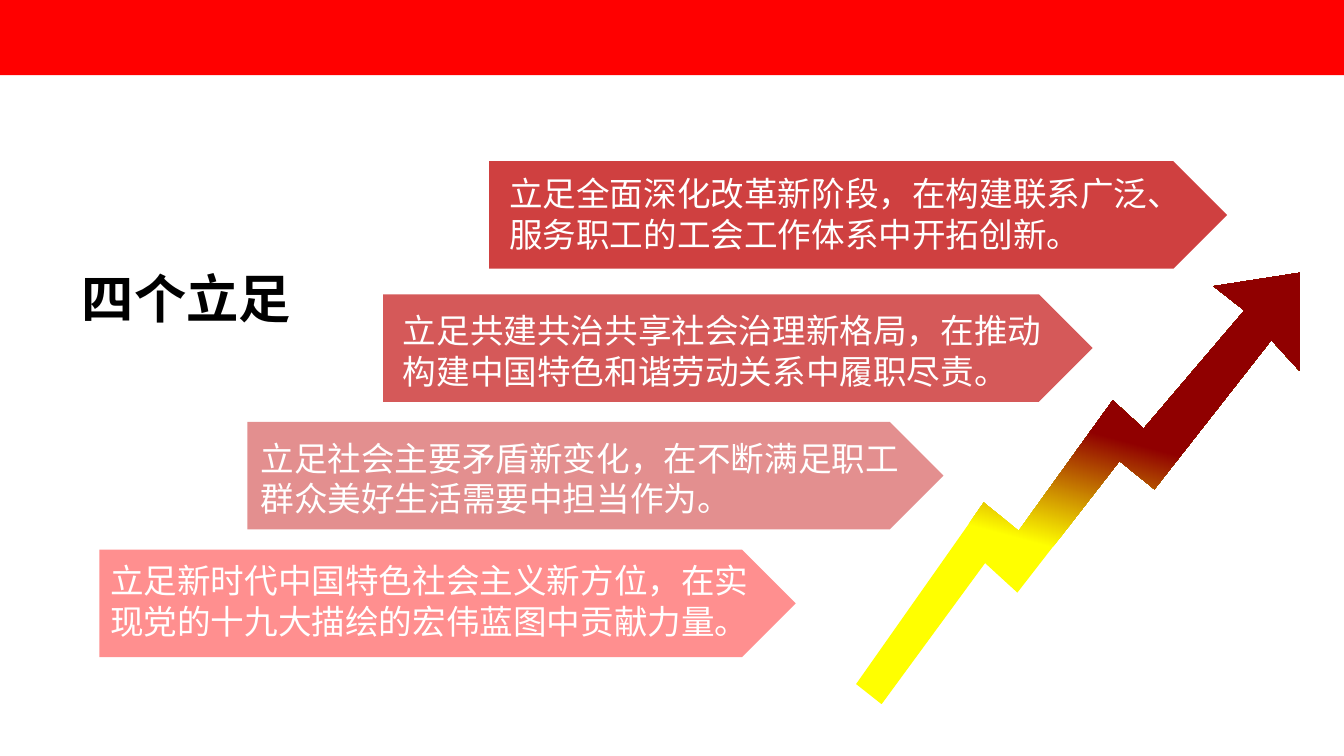
from lxml import etree
from pptx import Presentation
from pptx.dml.color import RGBColor
from pptx.enum.shapes import MSO_SHAPE as Shape
from pptx.enum.text import MSO_ANCHOR as Anchor, MSO_AUTO_SIZE as AutoSize, PP_ALIGN as Align
from pptx.oxml.ns import qn
from pptx.util import Inches, Pt

THEME = {
    "band": "FF0000", "light": "FF0000", "deep": "C00000",
    "arrow_start": "FFFF00", "arrow_end": "900000",
    "title": "000000", "body": "FFFFFF",
    "latin": "Arial", "cjk": "Noto Sans CJK SC",
    "title_size": 28, "body_size": 18,
}
TITLE = "四个立足"
BANNER_H, LABEL_H = 0.8, 0.71

# text, banner (left, top, width), colour, opacity in percent, label (left, top, width)
STANDPOINTS = [
    ("立足新时代中国特色社会主义新方位，在实现党的十九大描绘的宏伟蓝图中贡献力量。",
     (0.74, 4.09, 5.18), "light", 44, (0.72, 4.12, 5.19)),
    ("立足社会主要矛盾新变化，在不断满足职工群众美好生活需要中担当作为。",
     (1.84, 3.14, 5.18), "deep", 44, (1.84, 3.21, 5)),
    ("立足共建共治共享社会治理新格局，在推动构建中国特色和谐劳动关系中履职尽责。",
     (2.85, 2.19, 5.28), "deep", 65, (2.9, 2.26, 5)),
    ("立足全面深化改革新阶段，在构建联系广泛、服务职工的工会工作体系中开拓创新。",
     (3.64, 1.2, 5.49), "deep", 75, (3.69, 1.24, 5)),
]
RISING_ARROW = [
    (6.37, 5.09), (7.32, 3.74), (7.58, 3.95), (8.28, 2.98), (8.51, 3.19),
    (9.26, 2.31), (9.03, 2.13), (9.67, 2.03), (9.67, 2.76), (9.46, 2.53),
    (8.59, 3.64), (8.33, 3.43), (7.57, 4.41), (7.33, 4.19), (6.56, 5.24),
]


def color(name):
    return RGBColor.from_string(THEME[name])


def add_block(slide, preset, box, fill, opacity=100):
    block = slide.shapes.add_shape(preset, *map(Inches, box))
    block.shadow.inherit = False
    block.line.fill.background()
    block.fill.solid()
    block.fill.fore_color.rgb = color(fill)
    if opacity < 100:
        rgb = block.fill._xPr.find(qn("a:solidFill"))[0]
        etree.SubElement(rgb, qn("a:alpha")).set("val", str(opacity * 1000))


def write(holder, text, size, tint, latin, bold=False):
    frame = holder.text_frame
    frame.text = text
    frame.word_wrap = True
    frame.auto_size = AutoSize.SHAPE_TO_FIT_TEXT
    frame.vertical_anchor = Anchor.TOP
    paragraph = frame.paragraphs[0]
    paragraph.alignment = Align.LEFT
    run = paragraph.runs[0]
    run.font.size = Pt(THEME[size])
    run.font.bold = bold
    run.font.color.rgb = color(tint)
    run.font.name = THEME[latin]
    east_asian = etree.Element(qn("a:ea"), typeface=THEME["cjk"])
    run.font._element.find(qn("a:latin")).addnext(east_asian)


def add_rising_arrow(slide):
    start, *rest = [(Inches(x), Inches(y)) for x, y in RISING_ARROW]
    builder = slide.shapes.build_freeform(*start)
    builder.add_line_segments(rest, close=True)
    arrow = builder.convert_to_shape()
    arrow.shadow.inherit = False
    arrow.line.fill.background()
    arrow.fill.gradient()
    arrow.fill.gradient_angle = 75
    stops = [(0.38, "arrow_start"), (0.61, "arrow_end")]
    for stop, (position, tint) in zip(arrow.fill.gradient_stops, stops):
        stop.position = position
        stop.color.rgb = color(tint)


def main():
    deck = Presentation()
    deck.slide_width = Inches(10)
    deck.slide_height = deck.slide_width * 9 // 16
    slide = deck.slides.add_slide(deck.slide_layouts[5])

    add_block(slide, Shape.RECTANGLE, (0, 0, 10, 0.56), "band")
    for _, banner, fill, opacity, _ in STANDPOINTS:
        add_block(slide, Shape.PENTAGON, (*banner, BANNER_H), fill, opacity)
    for text, _, _, _, label in STANDPOINTS:
        label_box = slide.shapes.add_textbox(*map(Inches, (*label, LABEL_H)))
        write(label_box, text, "body_size", "body", "cjk")

    title = slide.shapes.title
    title.left, title.top, title.width, title.height = map(Inches, (0.51, 1.93, 1.91, 0.57))
    write(title, TITLE, "title_size", "title", "latin", bold=True)
    add_rising_arrow(slide)
    deck.save("out.pptx")


if __name__ == "__main__":
    main()
